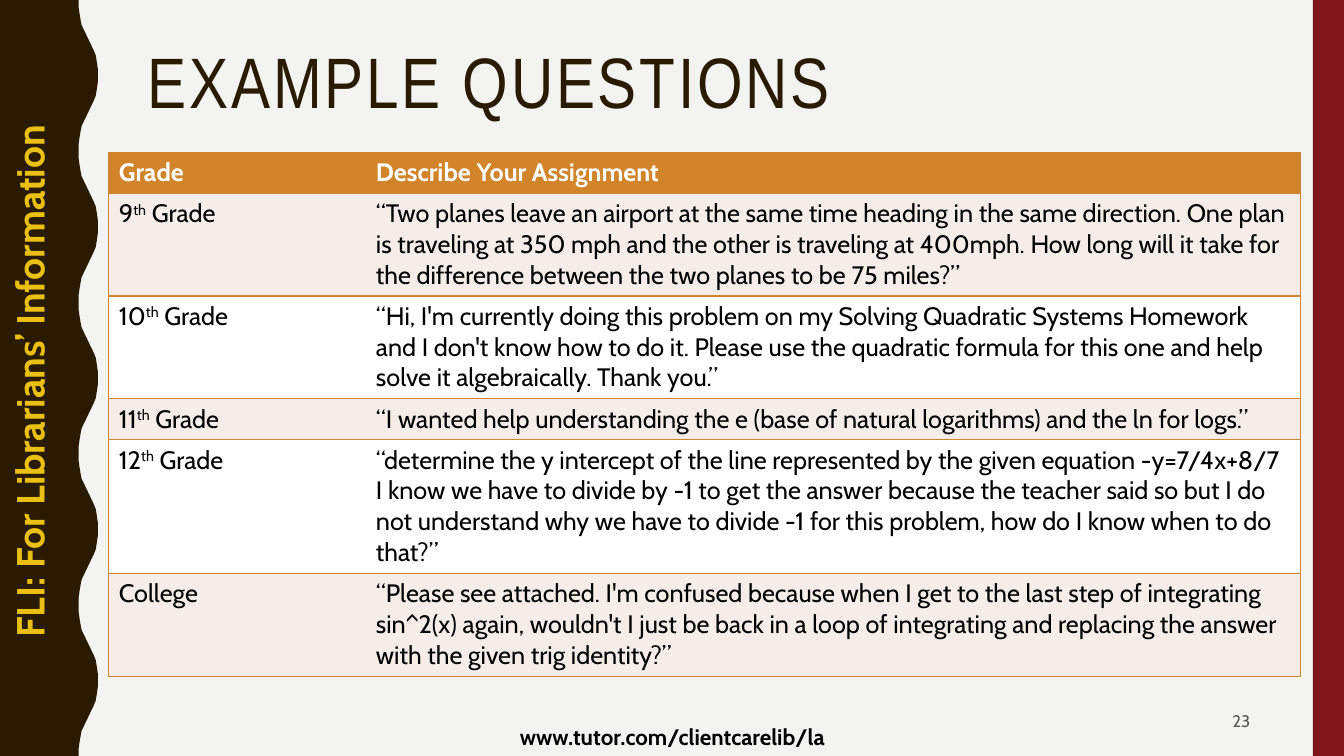
from lxml import etree
from pptx import Presentation
from pptx.dml.color import RGBColor
from pptx.enum.shapes import MSO_SHAPE
from pptx.enum.text import MSO_ANCHOR, PP_ALIGN
from pptx.oxml.ns import qn
from pptx.util import Inches, Pt

RECTANGLE = MSO_SHAPE.RECTANGLE
TOP, MIDDLE = MSO_ANCHOR.TOP, MSO_ANCHOR.MIDDLE
LEFT, CENTER, RIGHT = PP_ALIGN.LEFT, PP_ALIGN.CENTER, PP_ALIGN.RIGHT

WIDTH, HEIGHT = Inches(13.33), Inches(7.5)
COLUMNS, ROWS = 160, 90

BROWN, RED, ORANGE, GOLD = "2A1A00", "801617", "D18429", "E9C013"
PAPER, BLUSH, WHITE, BLACK, GRAY = "F3F3F2", "F7EDE8", "FFFFFF", "000000", "595959"

QUESTIONS = [
    ("Grade", "Describe Your Assignment", 1),
    ("9|th| Grade", "“Two planes leave an airport at the same time heading in the same direction. "
     "One plan is traveling at 350 mph and the other is traveling at 400mph. How long will it take "
     "for the difference between the two planes to be 75 miles?”", 3),
    ("10|th| Grade", "“Hi, I'm currently doing this problem on my Solving Quadratic Systems Homework "
     "and I don't know how to do it. Please use the quadratic formula for this one and help solve it "
     "algebraically. Thank you.”", 3),
    ("11|th| Grade", "“I wanted help understanding the e (base of natural logarithms) and the ln "
     "for logs.”", 1),
    ("12|th| Grade", "“determine the y intercept of the line represented by the given equation "
     "-y=7/4x+8/7\vI know we have to divide by -1 to get the answer because the teacher said so but "
     "I do not understand why we have to divide -1 for this problem, how do I know when to do "
     "that?”", 4),
    ("College", "“Please see attached. I'm confused because when I get to the last step of "
     "integrating sin^2(x) again, wouldn't I just be back in a loop of integrating and replacing "
     "the answer with the given trig identity?”", 3),
]

HALF_WAVE = [(9.36, 0), (9.36, 0.84), (9.48, 1.68), (9.6, 2.4), (9.72, 3), (9.96, 3.5),
             (10.2, 4), (10.44, 4.5), (10.68, 5), (10.92, 5.5), (11.16, 6), (11.4, 6.6),
             (11.52, 7.32), (11.64, 8.16), (11.64, 9)]
WAVE_LENGTH = 18


def color(hex_code):
    """Turn a hex string into a colour."""
    return RGBColor.from_string(hex_code)


def across(columns):
    """Convert grid columns to a length."""
    return round(WIDTH * columns / COLUMNS)


def down(rows):
    """Convert grid rows to a length."""
    return round(HEIGHT * rows / ROWS)


class SlideBuilder:
    """Hold the style and the current slide, and add elements to it."""

    def __init__(self, slide, font="Cabin"):
        """Keep the slide and its body font."""
        self.slide, self.font = slide, font

    def paint(self, shape, fill):
        """Give a shape a plain fill without line or shadow."""
        shape.fill.solid()
        shape.fill.fore_color.rgb = color(fill)
        shape.line.fill.background()
        shape.shadow.inherit = False

    def bar(self, left, top, width, height, fill):
        """Add a plain rectangle."""
        self.paint(self.slide.shapes.add_shape(
            RECTANGLE, across(left), down(top), across(width), down(height)), fill)

    def wavy_band(self, fill):
        """Add the left band with its repeating wavy edge."""
        wave = HALF_WAVE + [(x, WAVE_LENGTH - y) for x, y in HALF_WAVE[-2:0:-1]]
        edge = [(x, y + start) for start in range(0, ROWS, WAVE_LENGTH) for x, y in wave]
        outline = edge + [(HALF_WAVE[0][0], ROWS), (0, ROWS)]
        band = self.slide.shapes.build_freeform(0, 0, scale=1.0)
        band.add_line_segments([(across(x), down(y)) for x, y in outline], close=True)
        self.paint(band.convert_to_shape(), fill)

    def set_text(self, frame, text, size, ink, bold=False, align=LEFT, font=None):
        """Set text whose parts between bars alternate with superscript."""
        paragraph = frame.paragraphs[0]
        paragraph.alignment = align
        first, *others = text.split("|")
        paragraph.text = first
        for part in others:
            paragraph.add_run().text = part
        for run in paragraph.runs:
            run.font.size, run.font.bold = Pt(size), bold
            run.font.name = font or self.font
            run.font.color.rgb = color(ink)
        if others:
            paragraph.runs[1].font._element.set("baseline", "30000")
        return paragraph

    def label(self, left, top, width, height, text, size, ink, anchor=TOP, rotation=0, **style):
        """Add a text box and return its paragraph."""
        box = self.slide.shapes.add_textbox(across(left), down(top), across(width), down(height))
        box.rotation = rotation
        box.text_frame.word_wrap = True
        box.text_frame.vertical_anchor = anchor
        return self.set_text(box.text_frame, text, size, ink, **style)

    def border(self, cell, open_side, ink):
        """Draw cell borders on all sides but the open one."""
        properties = cell._tc.get_or_add_tcPr()
        for side in ("lnL", "lnR", "lnT", "lnB"):
            line = etree.SubElement(properties, qn(f"a:{side}"), w=str(Pt(1)))
            if side == open_side:
                etree.SubElement(line, qn("a:noFill"))
            else:
                fill = etree.SubElement(line, qn("a:solidFill"))
                etree.SubElement(fill, qn("a:srgbClr"), val=ink)

    def question_table(self, left, top, widths, rows):
        """Add the table, each row as high as its lines of text."""
        heights = [1.2 + 3.68 * lines for *_, lines in rows]
        table = self.slide.shapes.add_table(
            len(rows), len(widths), across(left), down(top),
            across(sum(widths)), down(sum(heights))).table
        table.horz_banding = False
        for column, width in zip(table.columns, widths):
            column.width = across(width)
        for index, (grade, question, _) in enumerate(rows):
            table.rows[index].height = down(heights[index])
            header = index == 0
            fill = ORANGE if header else (WHITE, BLUSH)[index % 2]
            for position, (text, open_side) in enumerate([(grade, "lnR"), (question, "lnL")]):
                cell = table.cell(index, position)
                self.border(cell, open_side, ORANGE)
                cell.fill.solid()
                cell.fill.fore_color.rgb = color(fill)
                self.set_text(cell.text_frame, text, 18, WHITE if header else BLACK, bold=header)


def main():
    """Build and save the slide."""
    deck = Presentation()
    deck.slide_width, deck.slide_height = WIDTH, HEIGHT
    slide = deck.slides.add_slide(deck.slide_layouts[6])
    slide.background.fill.solid()
    slide.background.fill.fore_color.rgb = color(PAPER)

    builder = SlideBuilder(slide)
    builder.wavy_band(BROWN)
    builder.bar(156.28, 0, 3.72, ROWS, RED)
    title = builder.label(16.44, 5.04, 133.6, 19.56, "EXAMPLE QUESTIONS", 51, BROWN,
                          font="Arial Narrow")
    title.line_spacing = 0.9
    title.runs[0].font._element.set("spc", "200")
    builder.question_table(12.96, 18.12, [30.6, 111.27], QUESTIONS)
    builder.label(53.05, 85.44, 54, 4.56, "www.tutor.com/clientcarelib/la", 16, BLACK,
                  anchor=MIDDLE, bold=True, align=CENTER)
    builder.label(144.15, 83.64, 5.88, 4.32, "23", 12, GRAY, anchor=MIDDLE, align=RIGHT)
    builder.label(-41.53, 42, 90, 6.84, "FLI: For Librarians’ Information", 28, GOLD,
                  rotation=270, bold=True, align=CENTER)
    deck.save("out.pptx")


if __name__ == "__main__":
    main()
